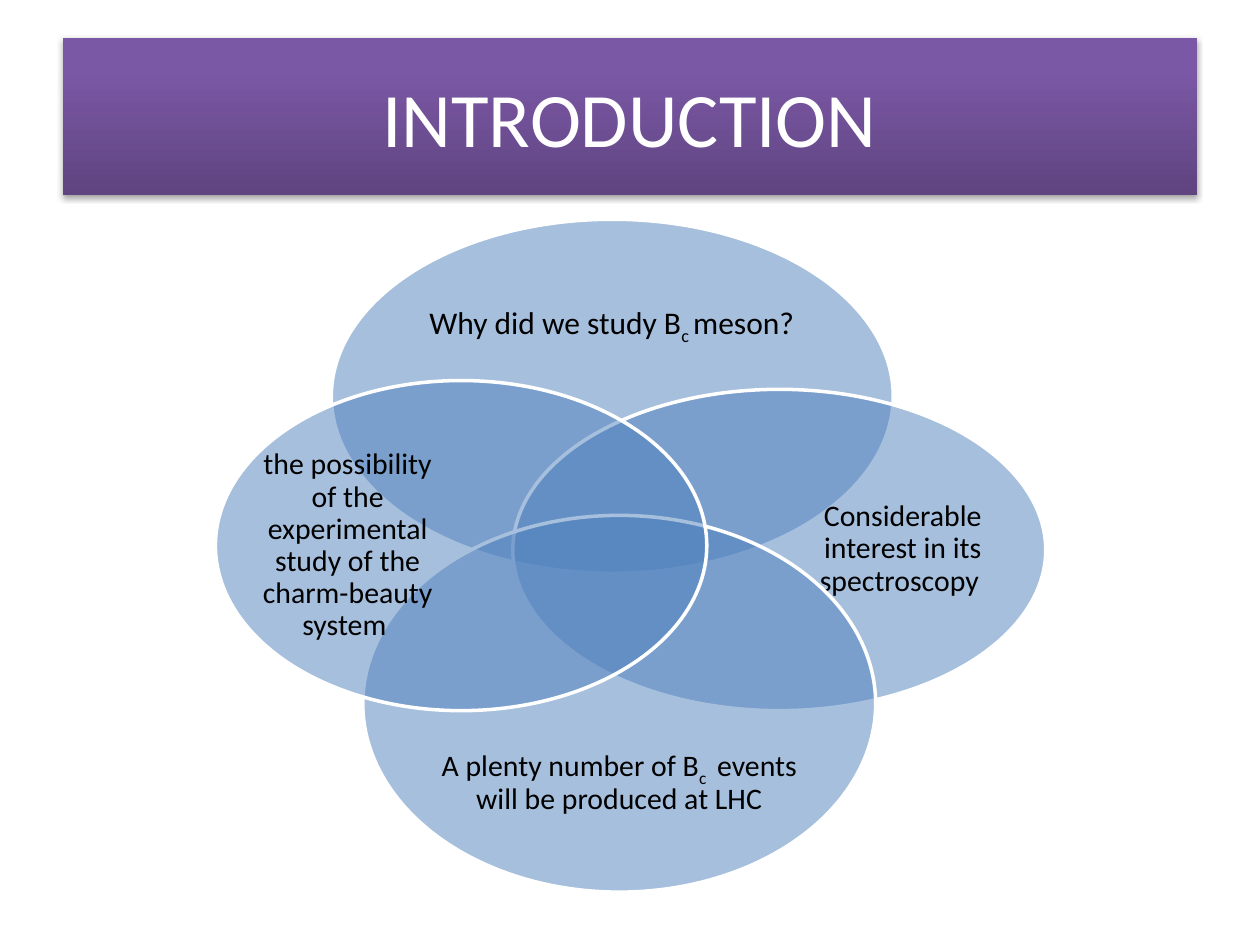
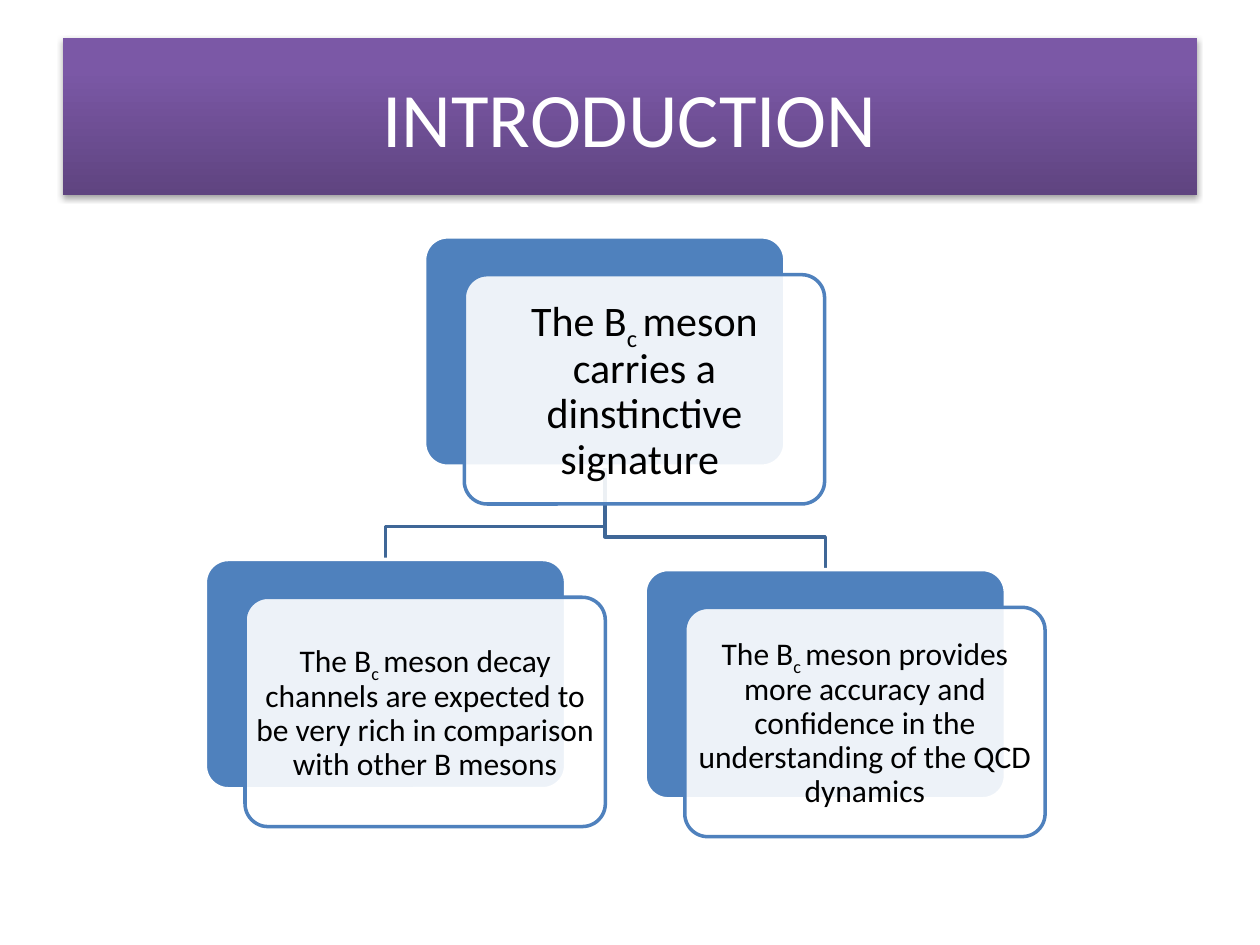
from copy import deepcopy
from dataclasses import dataclass

from lxml import etree
from pptx import Presentation
from pptx import util as u
from pptx.dml.color import RGBColor
from pptx.enum import shapes, text
from pptx.oxml import ns

PURPLE_STOPS = (
    (0, RGBColor(0x5F, 0x44, 0x80)),
    (0.8, RGBColor(0x7B, 0x58, 0xA6)),
    (1, RGBColor(0x7C, 0x57, 0xA8)),
)
BLUE = RGBColor(0x4F, 0x81, 0xBD)
DARK_BLUE = RGBColor(0x3F, 0x67, 0x97)
WHITE = RGBColor(0xFF, 0xFF, 0xFF)
BLACK = RGBColor(0, 0, 0)

FONT = "Calibri"
WIDTH, HEIGHT = u.Inches(10), u.Inches(7.5)
COLUMNS, ROWS = 100, 75
LINE_WIDTH = u.Pt(2)
CARD_W, CARD_H = 28.6, 18.2
FRONT_DX, FRONT_DY = 3.15, 3
ELBOW_RISE = 2.6


@dataclass(frozen=True)
class Box:
    x: float
    y: float
    w: float
    h: float

    def emu(self) -> tuple[int, int, int, int]:
        return col(self.x), row(self.y), col(self.w), row(self.h)


@dataclass(frozen=True)
class Petal:
    oval: Box
    label: Box
    words: str
    size: int


@dataclass(frozen=True)
class Card:
    x: float
    y: float
    words: str
    size: int
    inset: float

    @property
    def middle(self) -> float:
        return self.x + CARD_W / 2


TITLE_BOX = Box(5, 3, 90, 12.5)

PETALS = (
    Petal(Box(26.3, 17.4, 44.6, 28.1), Box(31.4, 21.2, 34.3, 8.9),
          "Why did we study B_c _meson?", 18),
    Petal(Box(40.7, 30.9, 42.3, 25.5), Box(63.5, 33.8, 16.3, 19.6),
          "Considerable interest in its spectroscopy ", 17),
    Petal(Box(28.8, 40.9, 40.7, 29.9), Box(33.5, 57.3, 31.3, 9.5),
          "A plenty number of B_c _ events will be produced at LHC", 17),
    Petal(Box(17.1, 30.2, 39, 26.2), Box(20.1, 33.2, 15, 20.2),
          "the possibility of the experimental study of the charm-beauty system ", 17),
)

SIGNATURE = Card(33.7, 18.8, "The B_c _meson carries a dinstinctive signature ", 24, 0.05)
REASONS = (
    Card(51.2, 45.2, "The B_c _meson provides more accuracy and confidence "
         "in the understanding of the QCD dynamics", 18, 0.02),
    Card(16.3, 44.4, "The B_c _meson decay channels are expected to be very rich "
         "in comparison with other B mesons", 18, 0.02),
)


def col(n: float) -> int:
    return round(WIDTH * n / COLUMNS)


def row(n: float) -> int:
    return round(HEIGHT * n / ROWS)


def write(s, words: str, size: int, color: RGBColor, inset: float, spacing: float) -> None:
    tf = s.text_frame
    tf.word_wrap = True
    tf.vertical_anchor = text.MSO_ANCHOR.MIDDLE
    tf.margin_left = tf.margin_right = tf.margin_top = tf.margin_bottom = u.Inches(inset)
    p = tf.paragraphs[0]
    p.alignment = text.PP_ALIGN.CENTER
    p.line_spacing = spacing
    p.font.name = FONT
    p.font.size = u.Pt(size)
    p.font.color.rgb = color
    for i, part in enumerate(words.split("_")):
        r = p.add_run()
        r.text = part
        if i % 2:
            r.font._element.set("baseline", "-25000")


def add_shape(slide, kind: shapes.MSO_SHAPE, box: Box, fill: RGBColor,
              line: RGBColor, opacity: int = 100):
    s = slide.shapes.add_shape(kind, *box.emu())
    s.shadow.inherit = False
    s.fill.solid()
    s.fill.fore_color.rgb = fill
    s.line.color.rgb = line
    s.line.width = LINE_WIDTH
    if opacity < 100:
        color = s._element.spPr.find(ns.qn("a:solidFill"))[0]
        etree.SubElement(color, ns.qn("a:alpha"), val=str(opacity * 1000))
    return s


def add_title(slide, words: str) -> None:
    s = slide.shapes.add_shape(shapes.MSO_SHAPE.RECTANGLE, *TITLE_BOX.emu())
    s.line.fill.background()
    s.fill.gradient()
    s.fill.gradient_angle = 90
    sp = s._element.spPr
    stops = sp.find(".//" + ns.qn("a:gsLst"))
    stops.append(deepcopy(stops[-1]))
    for stop, (position, color) in zip(s.fill.gradient_stops, PURPLE_STOPS):
        stop.position = position
        stop.color.rgb = color
    s.shadow.inherit = False
    shadow = etree.SubElement(
        sp.find(ns.qn("a:effectLst")), ns.qn("a:outerShdw"),
        blurRad=str(u.Pt(3.1)), dist=str(u.Pt(1.8)), dir="5400000", rotWithShape="0")
    black = etree.SubElement(shadow, ns.qn("a:srgbClr"), val=str(BLACK))
    etree.SubElement(black, ns.qn("a:alpha"), val="35000")
    write(s, words, 44, WHITE, 0.05, 1)


def add_petal(slide, petal: Petal) -> None:
    add_shape(slide, shapes.MSO_SHAPE.OVAL, petal.oval, BLUE, WHITE, 50)
    label = slide.shapes.add_textbox(*petal.label.emu())
    write(label, petal.words, petal.size, BLACK, 0, 0.9)


def add_elbow(slide, parent: Card, child: Card) -> None:
    start_y, bend_y = parent.y + CARD_H, child.y - ELBOW_RISE
    builder = slide.shapes.build_freeform(col(parent.middle), row(start_y))
    builder.add_line_segments(
        [(col(parent.middle), row(bend_y)),
         (col(child.middle), row(bend_y)),
         (col(child.middle), row(child.y))], close=False)
    s = builder.convert_to_shape()
    s.shadow.inherit = False
    s.fill.background()
    s.line.color.rgb = DARK_BLUE
    s.line.width = LINE_WIDTH


def add_card(slide, card: Card) -> None:
    kind = shapes.MSO_SHAPE.ROUNDED_RECTANGLE
    back = add_shape(slide, kind, Box(card.x, card.y, CARD_W, CARD_H), BLUE, WHITE)
    front = add_shape(slide, kind, Box(card.x + FRONT_DX, card.y + FRONT_DY, CARD_W, CARD_H),
                      WHITE, BLUE, 90)
    back.adjustments[0] = front.adjustments[0] = 0.1
    write(front, card.words, card.size, BLACK, card.inset, 0.9)


def add_slide(prs):
    slide = prs.slides.add_slide(prs.slide_layouts[6])
    add_title(slide, "INTRODUCTION")
    return slide


def main() -> None:
    prs = Presentation()
    prs.slide_width, prs.slide_height = WIDTH, HEIGHT

    motives = add_slide(prs)
    for petal in PETALS:
        add_petal(motives, petal)

    tree = add_slide(prs)
    for reason in REASONS:
        add_elbow(tree, SIGNATURE, reason)
    for card in (SIGNATURE, *REASONS):
        add_card(tree, card)

    prs.save("out.pptx")


if __name__ == "__main__":
    main()
